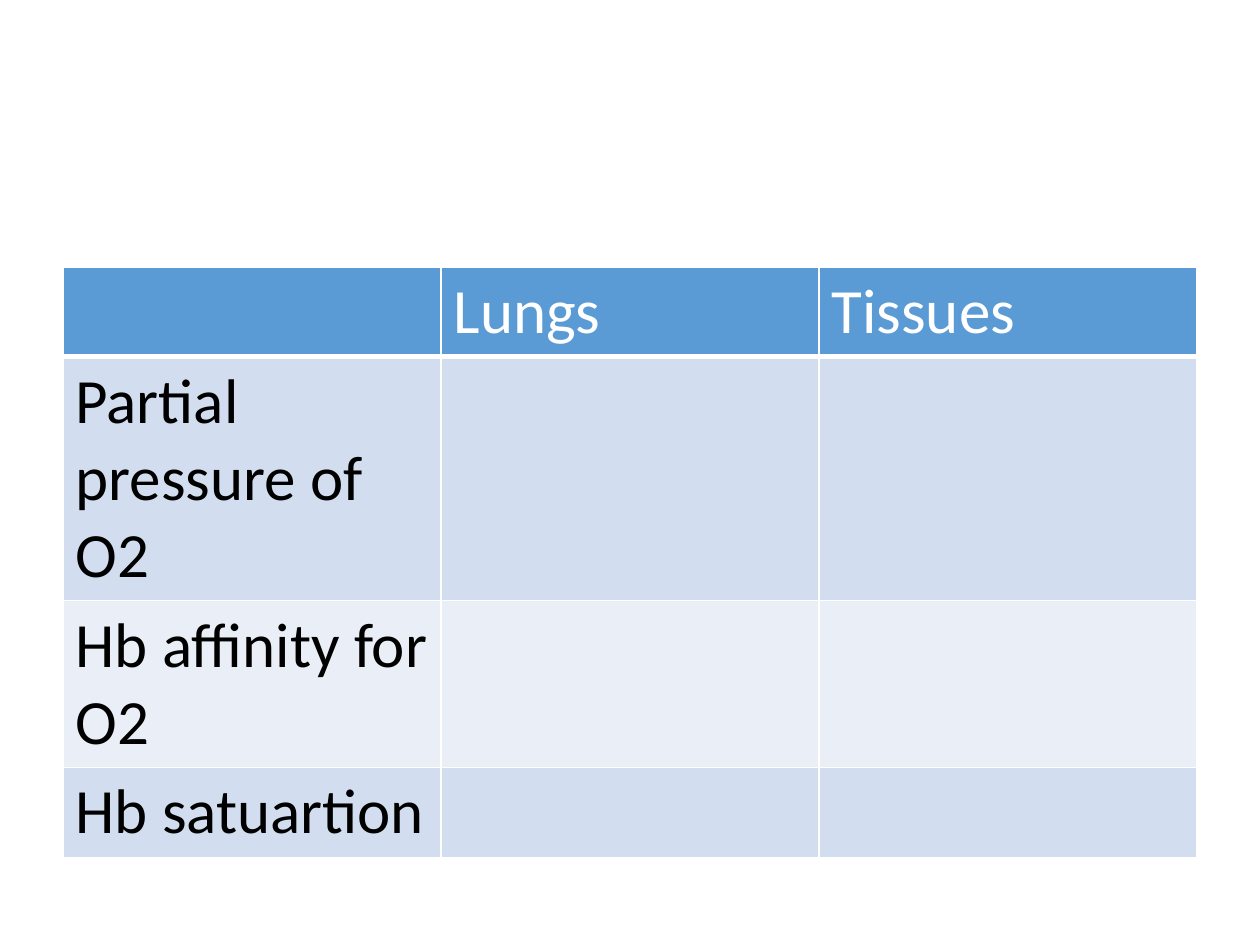
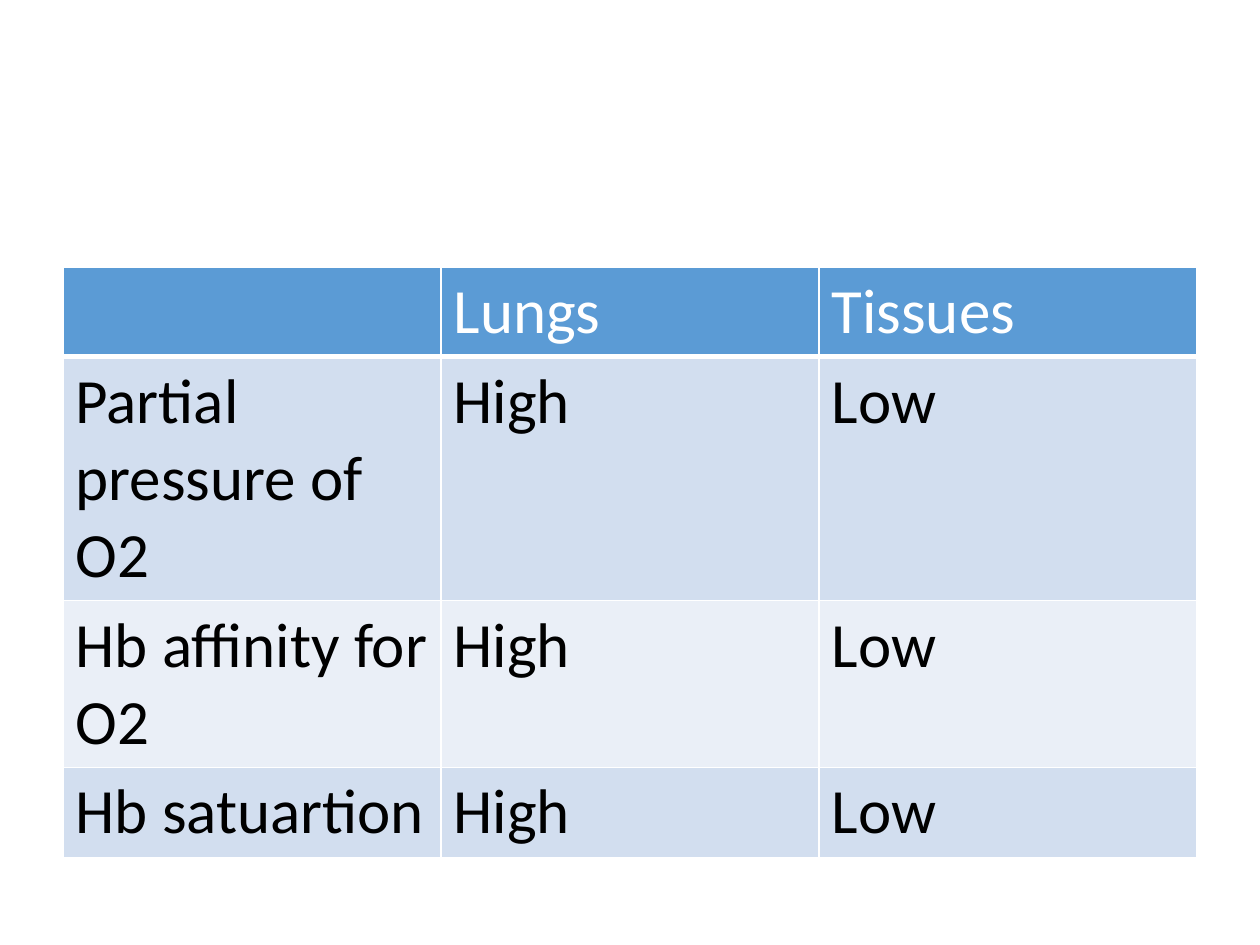
from dataclasses import dataclass

from lxml.etree import SubElement
from pptx import Presentation
from pptx.dml.color import RGBColor
from pptx.oxml.ns import qn
from pptx.slide import Slide
from pptx.table import _Cell
from pptx.util import Pt

COLORS = {
    "header": "5B9BD5",
    "band_dark": "D2DEEF",
    "band_light": "EAEFF7",
    "border": "FFFFFF",
    "header_text": "FFFFFF",
    "body_text": "000000",
}
FONT = "Calibri"
FONT_SIZE = Pt(36)
LINE_HEIGHT = Pt(44)
CELL_PADDING = Pt(7.2)
TABLE_LEFT, TABLE_TOP = Pt(36), Pt(152.6)
COLUMN_WIDTH = Pt(216)
SITES = ("Lungs", "Tissues")


@dataclass(frozen=True)
class Factor:
    label: str
    lines: int


@dataclass(frozen=True)
class CellStyle:
    fill: str
    text: str
    bottom_border: Pt = Pt(1)


FACTORS = (
    Factor("Partial pressure of O2", 3),
    Factor("Hb affinity for O2", 2),
    Factor("Hb satuartion", 1),
)
HEADER = CellStyle("header", "header_text", Pt(3))
BANDS = (
    CellStyle("band_dark", "body_text"),
    CellStyle("band_light", "body_text"),
)


def add_borders(cell: _Cell, bottom: Pt) -> None:
    properties = cell._tc.get_or_add_tcPr()
    for side in "LRTB":
        width = bottom if side == "B" else Pt(1)
        line = SubElement(properties, qn(f"a:ln{side}"), w=str(int(width)))
        fill = SubElement(line, qn("a:solidFill"))
        SubElement(fill, qn("a:srgbClr"), val=COLORS["border"])


def fill_cell(cell: _Cell, text: str, style: CellStyle) -> None:
    add_borders(cell, style.bottom_border)
    cell.fill.solid()
    cell.fill.fore_color.rgb = RGBColor.from_string(COLORS[style.fill])
    if text:
        run = cell.text_frame.paragraphs[0].add_run()
        run.text = text
        run.font.name = FONT
        run.font.size = FONT_SIZE
        run.font.color.rgb = RGBColor.from_string(COLORS[style.text])


def add_oxygen_table(slide: Slide, levels: tuple[str, str]) -> None:
    """Compare lungs and tissues, with the same levels for every factor."""
    rows = [("", *SITES)] + [(factor.label, *levels) for factor in FACTORS]
    line_counts = [1] + [factor.lines for factor in FACTORS]
    heights = [LINE_HEIGHT * count + CELL_PADDING for count in line_counts]
    columns = len(rows[0])
    table = slide.shapes.add_table(
        len(rows), columns, TABLE_LEFT, TABLE_TOP,
        COLUMN_WIDTH * columns, sum(heights),
    ).table
    table.first_row = False
    table.horz_banding = False
    for row_index, (texts, height) in enumerate(zip(rows, heights)):
        table.rows[row_index].height = height
        style = BANDS[(row_index - 1) % 2] if row_index else HEADER
        for column_index, text in enumerate(texts):
            fill_cell(table.cell(row_index, column_index), text, style)


def main() -> None:
    presentation = Presentation()
    presentation.slide_width = Pt(720)
    presentation.slide_height = Pt(540)
    blank = presentation.slide_layouts[6]
    for levels in (("", ""), ("High", "Low")):
        add_oxygen_table(presentation.slides.add_slide(blank), levels)
    presentation.save("out.pptx")


if __name__ == "__main__":
    main()
